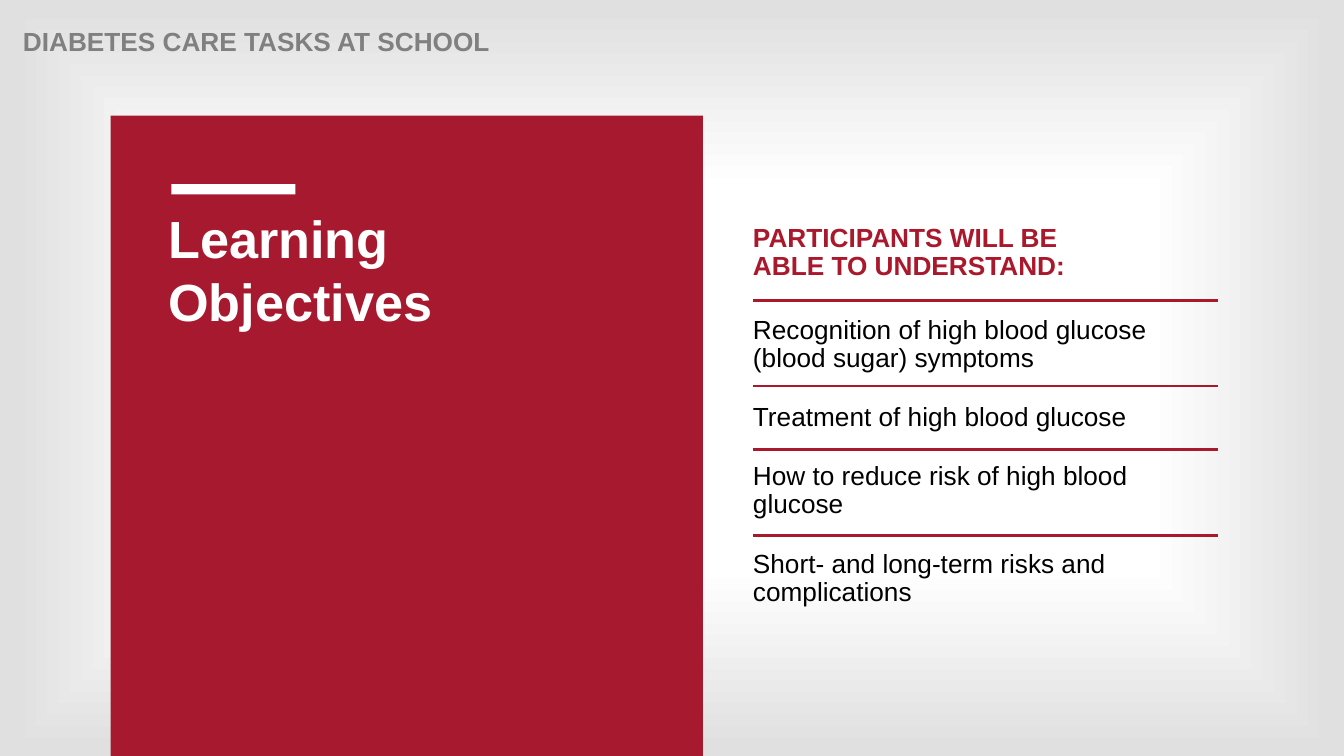
"""Build the learning objectives slide."""
from lxml.etree import SubElement
from pptx import Presentation
from pptx.dml.color import RGBColor
from pptx.enum.shapes import MSO_CONNECTOR, MSO_SHAPE
from pptx.enum.text import MSO_ANCHOR, MSO_AUTO_SIZE, PP_ALIGN
from pptx.oxml import parse_xml
from pptx.oxml.ns import nsdecls, qn
from pptx.util import Pt

RED = "A6192E"
RULE_RED = "AA182C"
WHITE = "FFFFFF"
GREY = "808080"
BLACK = "000000"
COLUMN_LEFT, COLUMN_WIDTH = 537.84, 331.92
RULE_TOPS = (214.56, 275.76, 321.12, 382.32)
BACKGROUND_STOPS = ((12, WHITE), (50, WHITE), (98, "E0E0E0"))
OBJECTIVES = (
    "Recognition of high blood glucose (blood sugar) symptoms",
    "Treatment of high blood glucose",
    "How to reduce risk of high blood glucose",
    "Short- and long-term risks and complications",
)


def color(value):
    """Turn a hex string into a colour."""
    return RGBColor.from_string(value)


def set_background(slide, stops):
    """Fill the background with a gradient that runs from the centre outwards."""
    stop_xml = "".join(
        f'<a:gs pos="{position * 1000}"><a:srgbClr val="{value}"/></a:gs>'
        for position, value in stops
    )
    background = parse_xml(
        f'<p:bg {nsdecls("p", "a")}><p:bgPr><a:gradFill rotWithShape="1">'
        f"<a:gsLst>{stop_xml}</a:gsLst>"
        '<a:path path="shape">'
        '<a:fillToRect l="50000" t="50000" r="50000" b="50000"/></a:path>'
        "</a:gradFill><a:effectLst/></p:bgPr></p:bg>"
    )
    slide.element.cSld.insert(0, background)


def add_block(slide, left, top, width, height, fill):
    """Add a plain filled rectangle."""
    shape = slide.shapes.add_shape(
        MSO_SHAPE.RECTANGLE, Pt(left), Pt(top), Pt(width), Pt(height)
    )
    shape.shadow.inherit = False
    shape.fill.solid()
    shape.fill.fore_color.rgb = color(fill)
    shape.line.fill.background()


def add_rule(slide, top):
    """Add a horizontal rule across the text column."""
    right = COLUMN_LEFT + COLUMN_WIDTH
    connector = slide.shapes.add_connector(
        MSO_CONNECTOR.STRAIGHT, Pt(COLUMN_LEFT), Pt(top), Pt(right), Pt(top)
    )
    connector.line.color.rgb = color(RULE_RED)
    connector.line.width = Pt(2)
    SubElement(connector.element.spPr, qn("a:effectLst"))


def add_run(paragraph, text, size, fill, bold):
    """Add one formatted run to a paragraph."""
    run = paragraph.add_run()
    run.text = text
    run.font.name = "Arial"
    run.font.size = Pt(size)
    run.font.bold = bold
    run.font.color.rgb = color(fill)


def add_text(slide, left, top, width, height, paragraphs, fill, bold, inset=True, gap=0):
    """Add a text box whose paragraphs are tuples of lines."""
    box = slide.shapes.add_textbox(Pt(left), Pt(top), Pt(width), Pt(height))
    frame = box.text_frame
    frame.word_wrap = True
    if not inset:
        frame.margin_left = frame.margin_right = Pt(0)
        frame.margin_top = frame.margin_bottom = Pt(0)
    for index, lines in enumerate(paragraphs):
        paragraph = frame.add_paragraph() if index else frame.paragraphs[0]
        paragraph.line_spacing = 0.9
        if index:
            paragraph.space_before = Pt(gap)
        for number, line in enumerate(lines):
            if number:
                paragraph.add_line_break()
            add_run(paragraph, line, 18.7, fill, bold)


def set_title(slide, text):
    """Place the title over the red panel."""
    title = slide.shapes.title
    title.left, title.top = Pt(113.04), Pt(144)
    title.width, title.height = Pt(350.64), Pt(140.4)
    frame = title.text_frame
    frame.word_wrap = True
    frame.auto_size = MSO_AUTO_SIZE.NONE
    frame.vertical_anchor = MSO_ANCHOR.TOP
    paragraph = frame.paragraphs[0]
    paragraph.alignment = PP_ALIGN.LEFT
    add_run(paragraph, text, 37.3, WHITE, True)
    slide.shapes.element.append(title.element)


def main():
    """Build and save the slide."""
    presentation = Presentation()
    presentation.slide_width, presentation.slide_height = Pt(960), Pt(540)
    slide = presentation.slides.add_slide(presentation.slide_layouts[5])
    set_background(slide, BACKGROUND_STOPS)
    add_block(slide, 79, 82.6, 423, 457.4, RED)
    add_block(slide, 122.4, 131.6, 88.6, 7.2, WHITE)
    add_text(slide, 9.36, 17.28, 792, 20.16,
             [("DIABETES CARE TASKS AT SCHOOL",)], GREY, True)
    add_text(slide, COLUMN_LEFT, 160.56, COLUMN_WIDTH, 40,
             [("PARTICIPANTS WILL BE", "ABLE TO UNDERSTAND:")], RULE_RED, True, inset=False)
    set_title(slide, "Learning Objectives")
    add_text(slide, COLUMN_LEFT, 226.08, COLUMN_WIDTH, 209.52,
             [(objective,) for objective in OBJECTIVES], BLACK, False, inset=False, gap=22)
    for top in RULE_TOPS:
        add_rule(slide, top)
    presentation.save("out.pptx")


if __name__ == "__main__":
    main()
